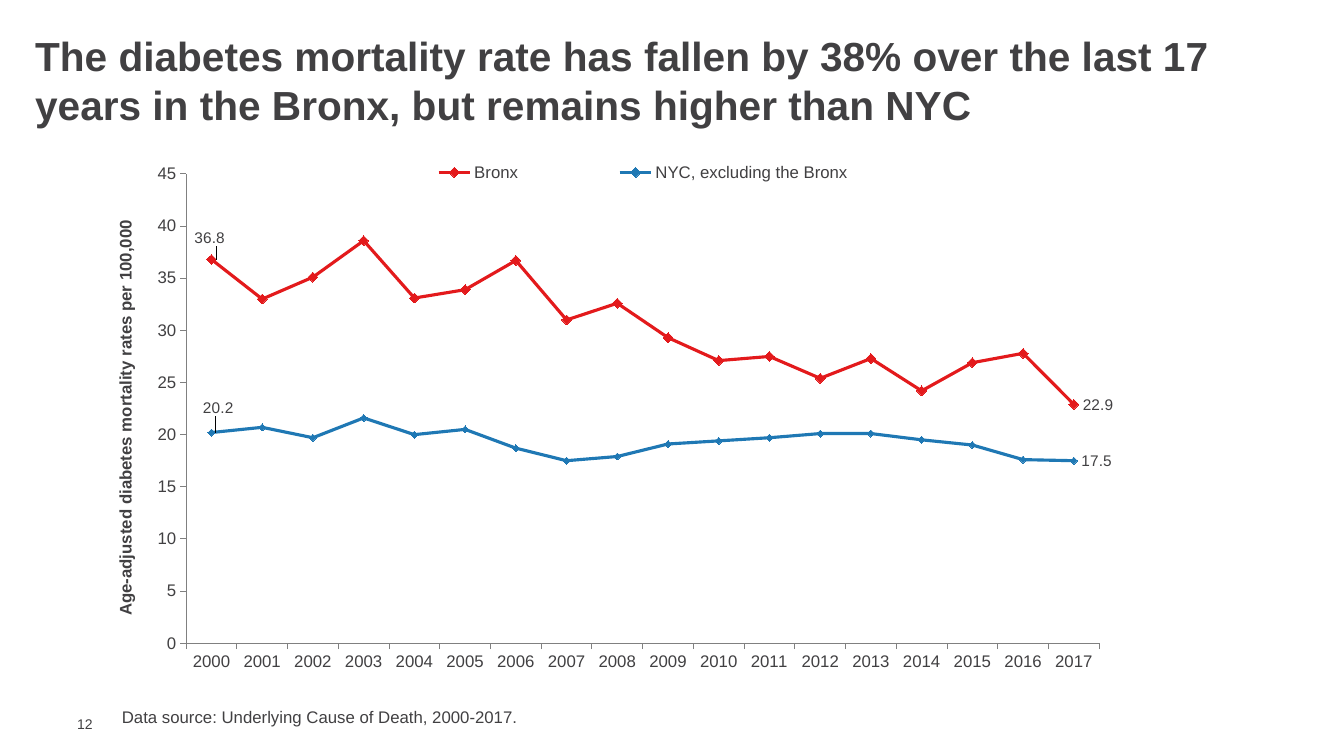
"""Build a slide charting diabetes mortality in the Bronx and the rest of NYC."""
import pptx
import pptx.chart.data
import pptx.dml.color
import pptx.enum.chart
import pptx.enum.text
import pptx.oxml
import pptx.util

Pt = pptx.util.Pt
COLORS = {"text": "414042", "axis": "808080", "bronx": "E31A1C", "nyc": "1F78B4"}
CHART_NS = 'xmlns:c="http://schemas.openxmlformats.org/drawingml/2006/chart"'
EXTENSION_NS = 'xmlns:c15="http://schemas.microsoft.com/office/drawing/2012/chart"'
LEADER_LINES = (
    f'<c:extLst {CHART_NS}><c:ext uri="{{CE6537A1-D6FC-4f65-9D91-7224C49458BB}}" {EXTENSION_NS}>'
    '<c15:showLeaderLines val="1"/></c:ext></c:extLst>'
)


def style_font(font, size, bold=False):
    font.name = "Arial"
    font.size = Pt(size)
    font.bold = bold
    font.color.rgb = pptx.dml.color.RGBColor.from_string(COLORS["text"])


def make_layout(**values):
    items = "".join(f'<c:{name} val="{value}"/>' for name, value in values.items())
    return pptx.oxml.parse_xml(
        f"<c:layout {CHART_NS}><c:manualLayout>{items}</c:manualLayout></c:layout>")


presentation = pptx.Presentation()
presentation.slide_width = Pt(960)
presentation.slide_height = Pt(540)
slide = presentation.slides.add_slide(presentation.slide_layouts[6])

middle = pptx.enum.text.MSO_ANCHOR.MIDDLE
top = pptx.enum.text.MSO_ANCHOR.TOP
texts = [
    ("The diabetes mortality rate has fallen by 38% over the last 17 years in the Bronx, "
     "but remains higher than NYC", (18, 18, 923, 78), 29, True, middle, 3.6),
    ("Data source: Underlying Cause of Death, 2000-2017.", (80, 501, 699, 22), 12, False, top, 3.6),
    ("12", (48, 511, 31, 12), 10, False, middle, 0),
]
for text, box, size, bold, anchor, margin in texts:
    shape = slide.shapes.add_textbox(*map(Pt, box))
    frame = shape.text_frame
    frame.word_wrap = True
    frame.vertical_anchor = anchor
    frame.margin_top = frame.margin_bottom = Pt(margin)
    run = frame.paragraphs[0].add_run()
    run.text = text
    style_font(run.font, size, bold)

chart_data = pptx.chart.data.CategoryChartData()
chart_data.categories = [str(year) for year in range(2000, 2018)]
chart_data.add_series("Bronx", [
    36.8, 33, 35.1, 38.6, 33.1, 33.9, 36.7, 31, 32.6,
    29.3, 27.1, 27.5, 25.4, 27.3, 24.2, 26.9, 27.8, 22.9])
chart_data.add_series("NYC, excluding the Bronx", [
    20.2, 20.7, 19.7, 21.6, 20, 20.5, 18.7, 17.5, 17.9,
    19.1, 19.4, 19.7, 20.1, 20.1, 19.5, 19, 17.6, 17.5])
chart = slide.shapes.add_chart(
    pptx.enum.chart.XL_CHART_TYPE.LINE_MARKERS,
    Pt(80), Pt(114), Pt(716), Pt(366), chart_data).chart
style_font(chart.font, 10)
chart.has_title = False

plot = chart.plots[0]
plot.vary_by_categories = False
plot_area = chart.element.chart.plotArea
for old_layout in plot_area.findall(pptx.oxml.ns.qn("c:layout")):
    plot_area.remove(old_layout)
plot_area.insert(0, make_layout(
    layoutTarget="inner", xMode="edge", yMode="edge", x=0.074, y=0.028, w=0.911, h=0.916))

for axis in (chart.category_axis, chart.value_axis):
    axis.has_major_gridlines = False
    axis.major_tick_mark = pptx.enum.chart.XL_TICK_MARK.OUTSIDE
    axis.minor_tick_mark = pptx.enum.chart.XL_TICK_MARK.NONE
    axis.format.line.width = Pt(0.75)
    axis.format.line.color.rgb = pptx.dml.color.RGBColor.from_string(COLORS["axis"])
    style_font(axis.tick_labels.font, 12)

rate_axis = chart.value_axis
rate_axis.minimum_scale = 0
rate_axis.maximum_scale = 45
rate_axis.major_unit = 5
rate_axis.tick_labels.number_format = "#,##0"
rate_axis.tick_labels.number_format_is_linked = False
run = rate_axis.axis_title.text_frame.paragraphs[0].add_run()
run.text = "Age-adjusted diabetes mortality rates per 100,000"
style_font(run.font, 12, True)

chart.has_legend = True
legend = chart.legend
legend.position = pptx.enum.chart.XL_LEGEND_POSITION.TOP
legend.include_in_layout = True
style_font(legend.font, 12)
for old_layout in legend._element.findall(pptx.oxml.ns.qn("c:layout")):
    legend._element.remove(old_layout)
legend._element.find(pptx.oxml.ns.qn("c:legendPos")).addnext(make_layout(
    xMode="edge", yMode="edge", x=0.23, y=0, w=0.6, h=0.05))

series_styles = [("bronx", 7, -0.026, -0.043), ("nyc", 5, -0.016, -0.049)]
for series, (color, marker_size, label_x, label_y) in zip(plot.series, series_styles):
    rgb = pptx.dml.color.RGBColor.from_string(COLORS[color])
    series.smooth = False
    series.format.line.width = Pt(2.25)
    series.format.line.color.rgb = rgb
    series.marker.style = pptx.enum.chart.XL_MARKER_STYLE.DIAMOND
    series.marker.size = marker_size
    series.marker.format.fill.solid()
    series.marker.format.fill.fore_color.rgb = rgb
    series.marker.format.line.color.rgb = rgb
    series.data_labels.show_value = False
    for index in (0, 17):
        label = series.points[index].data_label
        style_font(label.font, 11)
        label.position = pptx.enum.chart.XL_LABEL_POSITION.RIGHT
    labels = series.data_labels._element
    first_label = labels.find(pptx.oxml.ns.qn("c:dLbl"))
    first_label.insert(1, make_layout(x=label_x, y=label_y))
    labels.append(pptx.oxml.parse_xml(LEADER_LINES))

presentation.save("out.pptx")
